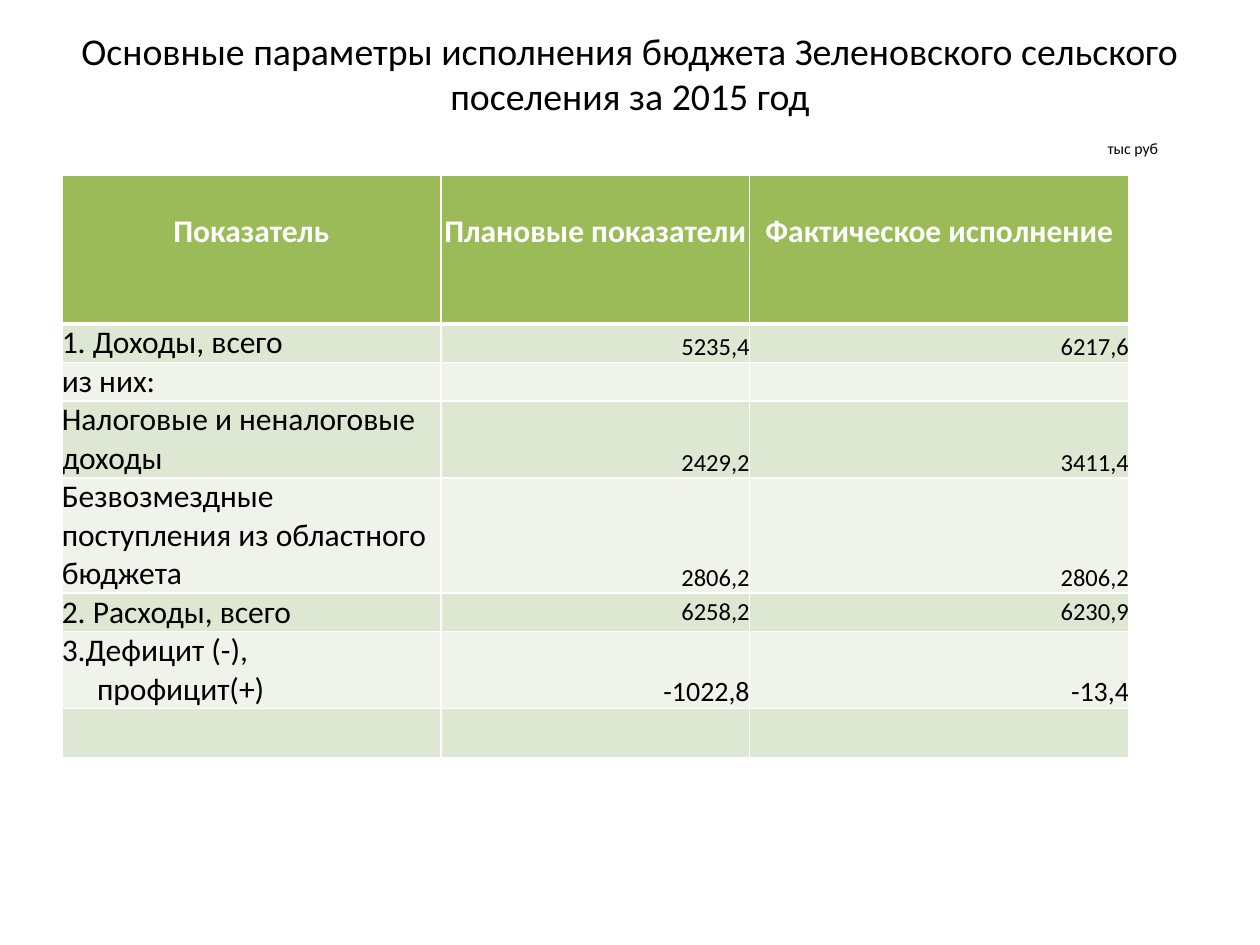
from lxml import etree
from pptx import Presentation
from pptx import util as u
from pptx.dml.color import RGBColor
from pptx.enum import text
from pptx.oxml.ns import qn

HUES = {"head": "9BBB59", "odd": "DEE7D1", "even": "EFF3EA",
        "ink": "000000", "line": "FFFFFF"}
COLS = [3.01, 2.45, 3.01]
TALL = [1.18, 0.3, 0.3, 0.59, 0.89, 0.3, 0.59, 0.39]
HEADS = ["Показатель", "Плановые показатели", "Фактическое исполнение"]
ROWS = [
    ["1. Доходы, всего", "5235,4", "6217,6"],
    ["из них:", "", ""],
    ["Налоговые и неналоговые доходы", "2429,2", "3411,4"],
    ["Безвозмездные поступления из областного бюджета", "2806,2", "2806,2"],
    ["2. Расходы, всего", "6258,2", "6230,9"],
    ["3.Дефицит (-),\nпрофицит(+)", "-1022,8", "-13,4"],
    ["", "", ""],
]
SPEND, GAP = 5, 6


def style(para, size, hue, align, bold=False):
    font = para.font
    font.name, font.size, font.bold = "Calibri", u.Pt(size), bold
    font.color.rgb = RGBColor.from_string(HUES[hue])
    para.alignment = align


def indent(para, inches):
    props = para._p.get_or_add_pPr()
    props.set("marL", str(u.Inches(inches)))
    props.set("indent", "0")


def edge(cell, head):
    props = cell._tc.get_or_add_tcPr()
    for spot, side in enumerate(("lnL", "lnR", "lnT", "lnB")):
        wide = 3 if head and side == "lnB" else 1
        line = etree.Element(qn("a:" + side), w=str(u.Pt(wide)))
        fill = etree.SubElement(line, qn("a:solidFill"))
        etree.SubElement(fill, qn("a:srgbClr"), val=HUES["line"])
        props.insert(spot, line)


def put(cell, words, row, col):
    head = row == 0
    hue = "head" if head else "odd" if row % 2 else "even"
    cell.fill.solid()
    cell.fill.fore_color.rgb = RGBColor.from_string(HUES[hue])
    edge(cell, head)
    cell.margin_left = cell.margin_right = cell.margin_bottom = 0
    cell.margin_top = u.Inches(0.3 if head else 0)
    cell.text = words
    for para in cell.text_frame.paragraphs:
        if head:
            style(para, 18, "line", text.PP_ALIGN.CENTER, True)
        elif col == 0:
            style(para, 18, "ink", text.PP_ALIGN.LEFT)
        else:
            style(para, 16 if row == GAP else 14, "ink", text.PP_ALIGN.RIGHT)
            para.line_spacing = 1.15
            if row != SPEND:
                cell.vertical_anchor = text.MSO_ANCHOR.BOTTOM
    if row == GAP and col == 0:
        indent(cell.text_frame.paragraphs[1], 0.28)


def add_title(slide):
    title = slide.shapes.title
    title.left, title.top, title.width, title.height = map(
        u.Inches, (0.5, 0.3, 9, 0.91))
    frame = title.text_frame
    frame.word_wrap = True
    frame.auto_size = text.MSO_AUTO_SIZE.NONE
    frame.vertical_anchor = text.MSO_ANCHOR.MIDDLE
    frame.margin_bottom = u.Inches(0.09)
    frame.text = ("Основные параметры исполнения бюджета Зеленовского "
                  "сельского поселения за 2015 год\nтыс руб")
    name, unit = frame.paragraphs
    style(name, 21.6, "ink", text.PP_ALIGN.CENTER)
    style(unit, 9, "ink", text.PP_ALIGN.LEFT)
    name.space_before = u.Pt(0)
    unit.space_before = u.Pt(12)
    indent(unit, 8.19)


def add_grid(slide):
    grid = slide.shapes.add_table(
        len(TALL), len(COLS), u.Inches(0.49), u.Inches(1.39),
        u.Inches(sum(COLS)), u.Inches(sum(TALL))).table
    for col, wide in zip(grid.columns, COLS):
        col.width = u.Inches(wide)
    for row, high in zip(grid.rows, TALL):
        row.height = u.Inches(high)
    for row, items in enumerate([HEADS] + ROWS):
        for col, words in enumerate(items):
            put(grid.cell(row, col), words, row, col)


def main():
    deck = Presentation()
    deck.slide_width, deck.slide_height = u.Inches(10), u.Inches(7.5)
    slide = deck.slides.add_slide(deck.slide_layouts[5])
    add_title(slide)
    add_grid(slide)
    deck.save("out.pptx")


if __name__ == "__main__":
    main()
